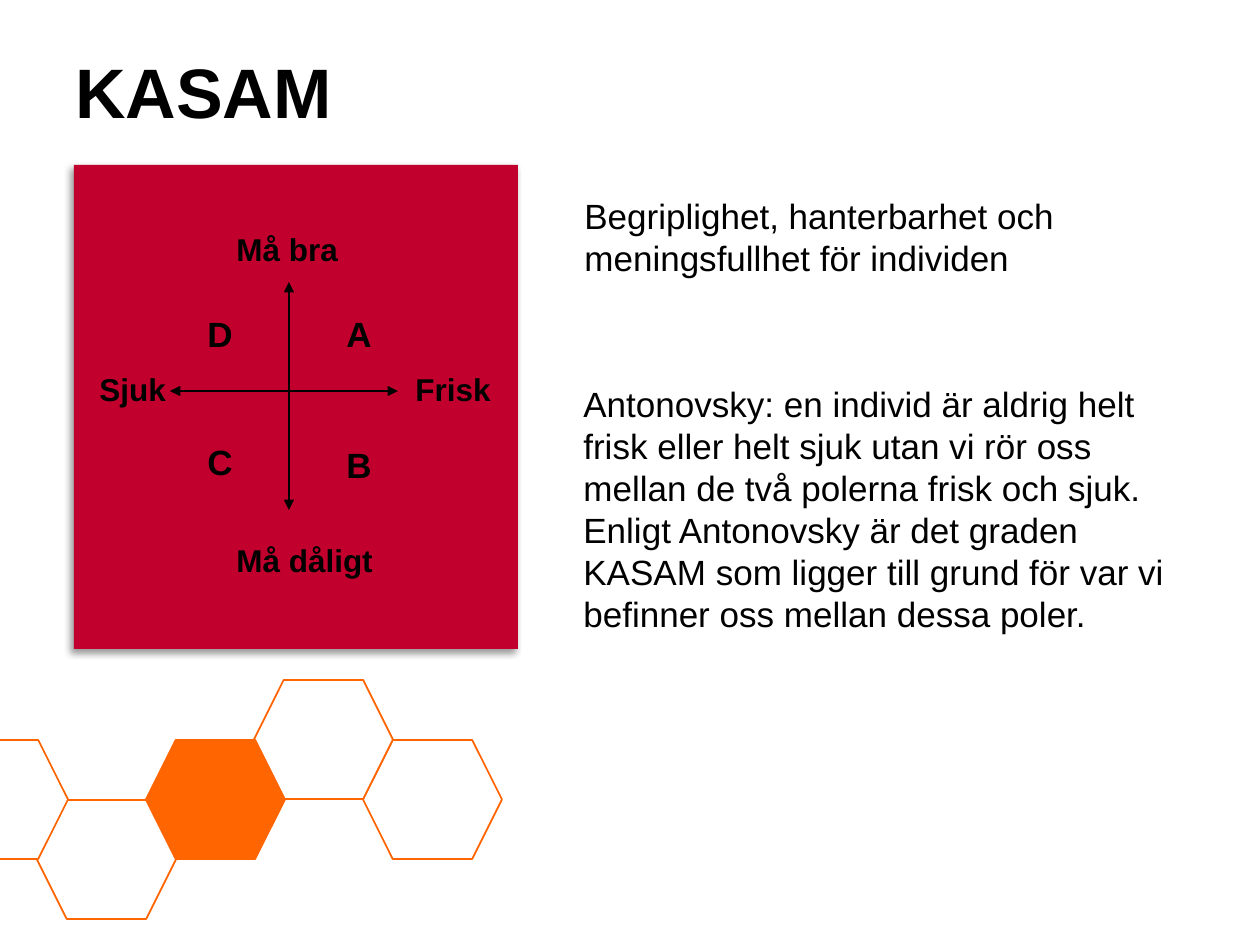
from dataclasses import dataclass

from lxml import etree
from pptx import Presentation
from pptx import util as u
from pptx.dml.color import RGBColor
from pptx.enum import shapes, text
from pptx.oxml import parse_xml
from pptx.oxml.ns import nsdecls, qn

EMU_PER_PX = 914400 / 126


def px(length):
    return u.Emu(round(length * EMU_PER_PX))


@dataclass(frozen=True)
class Theme:
    font: str = "Arial"
    ink: str = "000000"
    paper: str = "FFFFFF"
    accent: str = "FF6500"
    panel: str = "C2002D"
    title_size: int = 40
    body_size: int = 20
    label_size: int = 18
    outline: float = 1
    axis: float = 0.75


class SlideBuilder:
    def __init__(self, slide, theme):
        self.slide = slide
        self.theme = theme

    def shape(self, kind, left, top, width, height, fill, line=None):
        shape = self.slide.shapes.add_shape(
            kind, px(left), px(top), px(width), px(height))
        shape.shadow.inherit = False
        shape.fill.solid()
        shape.fill.fore_color.rgb = RGBColor.from_string(fill)
        if line:
            shape.line.color.rgb = RGBColor.from_string(line)
            shape.line.width = u.Pt(self.theme.outline)
        else:
            shape.line.fill.background()
        return shape

    def hexagon(self, left, top, width, height, fill):
        shape = self.shape(shapes.MSO_SHAPE.HEXAGON, left, top, width, height,
                           fill, self.theme.accent)
        shape.adjustments[0] = 0.25

    def panel(self, left, top, width, height):
        shape = self.shape(shapes.MSO_SHAPE.RECTANGLE, left, top, width, height,
                           self.theme.panel)
        properties = shape._element.spPr
        properties.remove(properties.find(qn("a:effectLst")))
        properties.append(parse_xml(
            f'<a:effectLst {nsdecls("a")}>'
            f'<a:outerShdw blurRad="{u.Pt(4)}" dist="{u.Pt(3)}" dir="8100000"'
            ' algn="tr" rotWithShape="0">'
            f'<a:srgbClr val="{self.theme.ink}"><a:alpha val="40000"/></a:srgbClr>'
            '</a:outerShdw></a:effectLst>'))

    def double_arrow(self, x1, y1, x2, y2):
        connector = self.slide.shapes.add_connector(
            shapes.MSO_CONNECTOR.STRAIGHT, px(x1), px(y1), px(x2), px(y2))
        connector.line.color.rgb = RGBColor.from_string(self.theme.ink)
        connector.line.width = u.Pt(self.theme.axis)
        line = connector.line._get_or_add_ln()
        for end in ("a:headEnd", "a:tailEnd"):
            etree.SubElement(line, qn(end), type="triangle")
        etree.SubElement(connector._element.spPr, qn("a:effectLst"))

    def text(self, words, left, top, width, height, size, bold=False):
        box = self.slide.shapes.add_textbox(
            px(left), px(top), px(width), px(height))
        frame = box.text_frame
        frame.word_wrap = True
        frame.vertical_anchor = text.MSO_ANCHOR.TOP
        frame.text = words
        font = frame.paragraphs[0].runs[0].font
        font.name = self.theme.font
        font.size = u.Pt(size)
        font.bold = bold
        font.color.rgb = RGBColor.from_string(self.theme.ink)


def main():
    presentation = Presentation()
    presentation.slide_width = px(1260)
    presentation.slide_height = px(945)
    theme = Theme()
    slide = presentation.slides.add_slide(presentation.slide_layouts[6])
    builder = SlideBuilder(slide, theme)

    # Honeycomb: equal columns, each shifted by whole half-heights
    for column, half_steps in reversed(list(enumerate((0, 1, 0, -1, 0)))):
        fill = theme.accent if column == 2 else theme.paper
        builder.hexagon(-71 + column * 217 // 2, 740 + half_steps * 60,
                        139, 119, fill)

    # Title and panel
    builder.panel(74, 165, 444, 484)
    builder.text("KASAM", 63, 42, 1134, 158, theme.title_size, bold=True)

    # Axes
    builder.double_arrow(289, 282, 289, 510)
    builder.double_arrow(170, 391, 398, 391)

    # Quadrant letters
    for letter, left, top in (("D", 195, 306), ("A", 334, 306),
                              ("C", 195, 434), ("B", 334, 437)):
        builder.text(letter, left, top, 59, 55, theme.body_size, bold=True)

    # Axis labels
    for label, left, top, width in (("Må bra", 224, 224, 147),
                                    ("Må dåligt", 224, 535, 174),
                                    ("Frisk", 403, 364, 117),
                                    ("Sjuk", 87, 364, 100)):
        builder.text(label, left, top, width, 51, theme.label_size, bold=True)

    # Explanations
    builder.text("Begriplighet, hanterbarhet och meningsfullhet för individen",
                 572, 188, 567, 139, theme.body_size)
    builder.text("Antonovsky: en individ är aldrig helt frisk eller helt sjuk "
                 "utan vi rör oss mellan de två polerna frisk och sjuk. Enligt "
                 "Antonovsky är det graden KASAM som ligger till grund för var "
                 "vi befinner oss mellan dessa poler.",
                 571, 376, 644, 318, theme.body_size)

    presentation.save("out.pptx")


if __name__ == "__main__":
    main()
